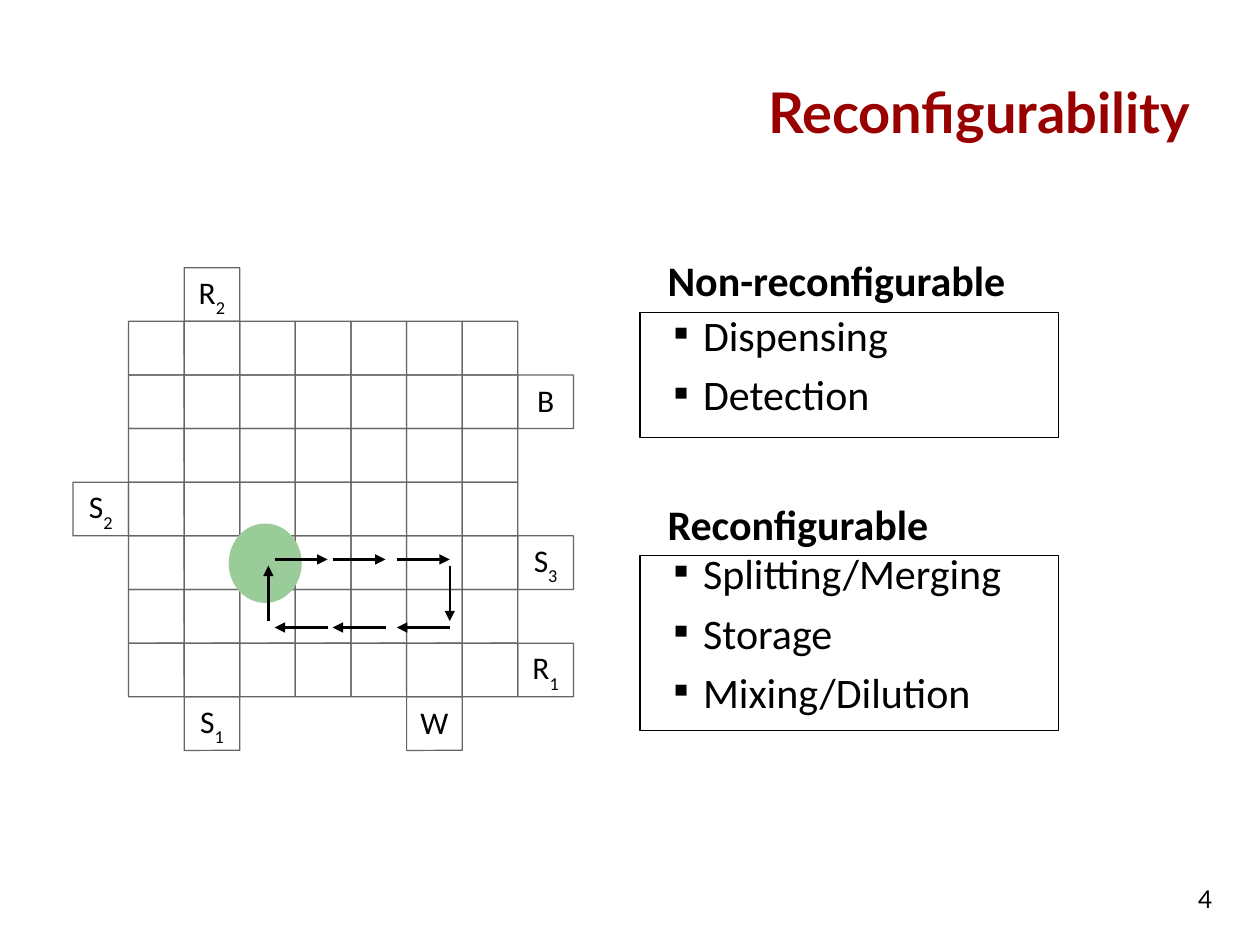
from dataclasses import dataclass
from itertools import product

from lxml.etree import SubElement
from pptx import Presentation
from pptx.dml.color import RGBColor
from pptx.enum.shapes import MSO_CONNECTOR, MSO_SHAPE
from pptx.enum.text import MSO_ANCHOR, MSO_AUTO_SIZE, PP_ALIGN
from pptx.oxml.ns import qn
from pptx.util import Inches, Pt


@dataclass(frozen=True)
class Theme:
    black: RGBColor = RGBColor(0x00, 0x00, 0x00)
    title: RGBColor = RGBColor(0x99, 0x00, 0x00)
    cell: RGBColor = RGBColor(0x66, 0x66, 0x66)
    droplet: RGBColor = RGBColor(0x99, 0xCC, 0x99)
    heading_font: str = "Lato"
    body_font: str = "Calibri"
    title_size: int = 32
    body_size: int = 24
    port_size: int = 18
    number_size: int = 14


THEME = Theme()


def add_run(paragraph, text, size, font=THEME.body_font, color=THEME.black, bold=False):
    run = paragraph.add_run()
    run.text = text
    run.font.name, run.font.size, run.font.bold = font, Pt(size), bold
    run.font.color.rgb = color
    return run


def set_margins(frame, horizontal=0, vertical=0):
    frame.margin_left = frame.margin_right = Inches(horizontal)
    frame.margin_top = frame.margin_bottom = Inches(vertical)


def add_text_frame(shapes, box, horizontal=0, vertical=0):
    frame = shapes.add_textbox(*map(Inches, box)).text_frame
    frame.word_wrap = True
    set_margins(frame, horizontal, vertical)
    return frame


def add_outline(shapes, kind, box, color, width, fill=None):
    outline = shapes.add_shape(kind, *map(Inches, box))
    outline.shadow.inherit = False
    outline.line.color.rgb, outline.line.width = color, Pt(width)
    if fill is None:
        outline.fill.background()
    else:
        outline.fill.solid()
        outline.fill.fore_color.rgb = fill
    return outline


def add_arrow(shapes, start, end):
    arrow = shapes.add_connector(MSO_CONNECTOR.STRAIGHT, *map(Inches, start + end))
    arrow.line.color.rgb, arrow.line.width = THEME.black, Pt(1.45)
    SubElement(arrow.line._get_or_add_ln(), qn("a:tailEnd"), type="triangle")
    SubElement(arrow._element.spPr, qn("a:effectLst"))


def add_bullet(paragraph):
    properties = paragraph._p.get_or_add_pPr()
    properties.set("marL", str(Inches(0.47)))
    properties.set("indent", str(Inches(-0.23)))
    color = SubElement(properties, qn("a:buClr"))
    SubElement(color, qn("a:srgbClr"), val=str(THEME.black))
    SubElement(properties, qn("a:buSzPct"), val="45000")
    SubElement(properties, qn("a:buChar"), char="■")


def place_title(slide, box, text):
    title = slide.shapes.title
    title.left, title.top, title.width, title.height = map(Inches, box)
    frame = title.text_frame
    frame.auto_size = MSO_AUTO_SIZE.NONE
    frame.vertical_anchor = MSO_ANCHOR.MIDDLE
    set_margins(frame)
    paragraph = frame.paragraphs[0]
    paragraph.alignment, paragraph.line_spacing = PP_ALIGN.RIGHT, 0.97
    add_run(paragraph, text, THEME.title_size, THEME.heading_font, THEME.title, True)


def place_chip(slide, box, size, ports):
    """Square array of cells; ports sit at (column, row) just outside it."""
    left, top, width, height = box
    cell_width, cell_height = width / size, height / size
    chip = slide.shapes.add_group_shape().shapes

    def add_cell(column, row):
        cell_box = (left + column * cell_width, top + row * cell_height,
                    cell_width, cell_height)
        cell = add_outline(chip, MSO_SHAPE.ROUNDED_RECTANGLE, cell_box, THEME.cell, 0.71)
        cell.adjustments[0] = 0.004
        return cell

    for row, column in product(range(size), repeat=2):
        add_cell(column, row)

    for column, row, letter, index in ports:
        frame = add_cell(column, row).text_frame
        frame.vertical_anchor = MSO_ANCHOR.MIDDLE
        set_margins(frame, 0.1, 0.05)
        paragraph = frame.paragraphs[0]
        paragraph.alignment, paragraph.line_spacing = PP_ALIGN.CENTER, 0.96
        add_run(paragraph, letter, THEME.port_size)
        if index:
            subscript = add_run(paragraph, index, THEME.port_size)
            subscript.font._element.set("baseline", "-33000")


def place_droplet_route(slide, box):
    """Droplet at the upper left corner and a clockwise loop of arrows."""
    left, top, width, height = box
    right, bottom = left + width, top + height
    route = slide.shapes.add_group_shape().shapes
    add_outline(route, MSO_SHAPE.OVAL, (left - 0.31, top - 0.28, 0.57, 0.62),
                THEME.droplet, 0.75, THEME.droplet)

    step, gap = 0.42, 0.05
    starts = (left + gap, left + 0.51, right - step)
    for x in starts:
        add_arrow(route, (x, top), (x + step, top))
    for x in reversed(starts):
        add_arrow(route, (x + step, bottom), (x, bottom))
    add_arrow(route, (left, bottom - gap), (left, top + gap))
    add_arrow(route, (right, top + gap), (right, bottom - gap))


def place_operations(slide, box, heading, operations, list_shift):
    """Bold heading above a framed bullet list."""
    left, top, width, height = box
    add_outline(slide.shapes, MSO_SHAPE.RECTANGLE, box, THEME.black, 0.75)

    heading_frame = add_text_frame(
        slide.shapes, (left + 0.12, top - 0.48, 3.76, 0.48), 0.1, 0.05)
    heading_line = heading_frame.paragraphs[0]
    heading_line.line_spacing = 0.96
    add_run(heading_line, heading, THEME.body_size, bold=True)

    list_frame = add_text_frame(
        slide.shapes, (left + 0.03, top + list_shift, width - 0.03, height))
    for position, operation in enumerate(operations):
        item = list_frame.add_paragraph() if position else list_frame.paragraphs[0]
        item.line_spacing, item.space_before = 0.97, Pt(6)
        add_bullet(item)
        add_run(item, operation, THEME.body_size)


def place_slide_number(slide, box, number):
    paragraph = add_text_frame(slide.shapes, box).paragraphs[0]
    paragraph.line_spacing = 0.96
    add_run(paragraph, number, THEME.number_size, THEME.heading_font)


def main():
    presentation = Presentation()
    presentation.slide_width, presentation.slide_height = Inches(10), Inches(7.5)
    slide = presentation.slides.add_slide(presentation.slide_layouts[5])

    place_title(slide, (0.5, 0.3, 8.95, 1.21), "Reconfigurability")

    # Biochip with its reservoirs, detector and waste ports
    ports = [(-1, 3, "S", "2"), (1, -1, "R", "2"), (7, 1, "B", ""), (7, 4, "S", "3"),
             (1, 7, "S", "1"), (5, 7, "W", ""), (7, 6, "R", "1")]
    place_chip(slide, (1.02, 2.55, 3.09, 2.98), 7, ports)
    place_droplet_route(slide, (2.13, 4.44, 1.44, 0.54))

    # Operation lists
    place_operations(slide, (5.08, 2.48, 3.32, 0.99), "Non-reconfigurable",
                     ["Dispensing", "Detection"], 0)
    place_operations(slide, (5.08, 4.41, 3.32, 1.39), "Reconfigurable",
                     ["Splitting/Merging", "Storage", "Mixing/Dilution"], -0.04)

    place_slide_number(slide, (9.51, 7.03, 0.4, 0.32), "4")
    presentation.save("out.pptx")


if __name__ == "__main__":
    main()
